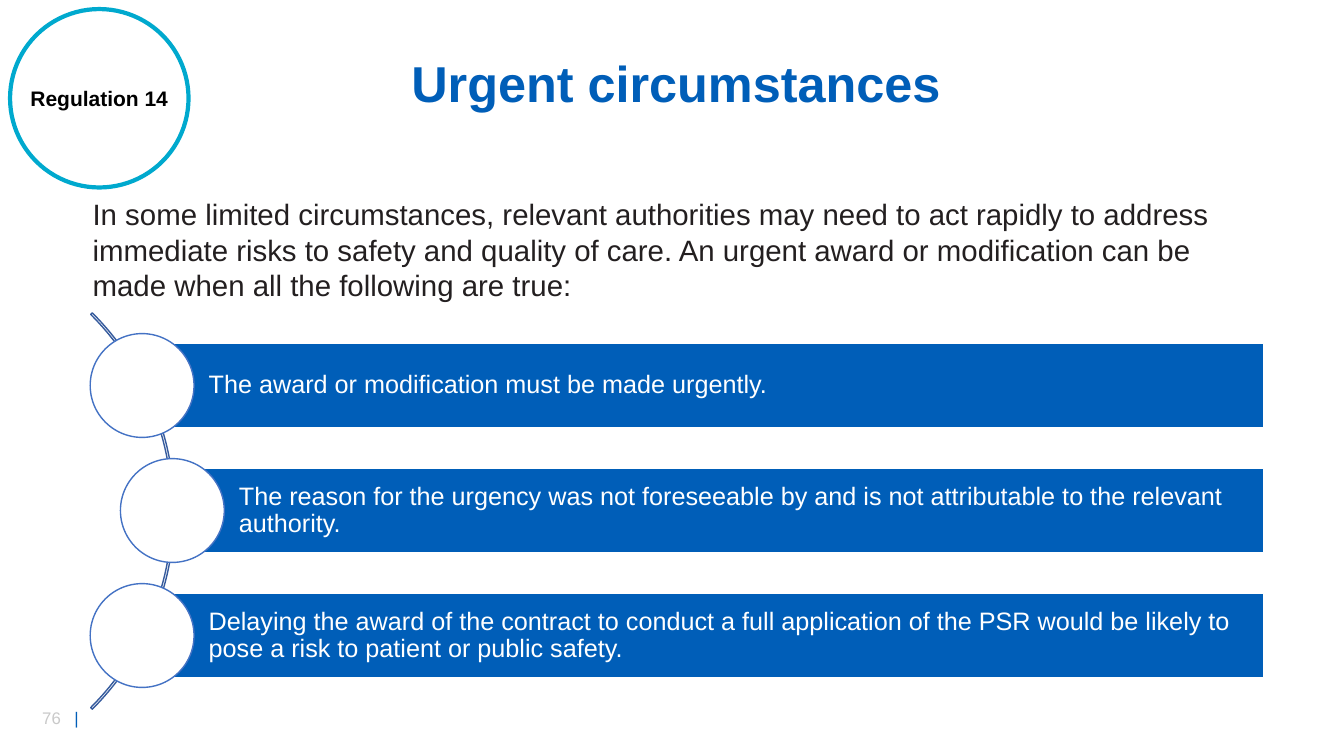
from dataclasses import dataclass

from lxml import etree
from pptx import Presentation
from pptx.dml.color import RGBColor
from pptx.enum.shapes import MSO_SHAPE
from pptx.enum.text import MSO_ANCHOR, PP_ALIGN
from pptx.oxml.ns import qn
from pptx.shapes.autoshape import Shape
from pptx.slide import Slide
from pptx.text.text import _Paragraph
from pptx.util import Inches, Pt

ELLIPSE, RECTANGLE, BLOCK_ARC = MSO_SHAPE.OVAL, MSO_SHAPE.RECTANGLE, MSO_SHAPE.BLOCK_ARC
MIDDLE, CENTER, LEFT = MSO_ANCHOR.MIDDLE, PP_ALIGN.CENTER, PP_ALIGN.LEFT

BLUE, WHITE, BLACK = "005EB8", "FFFFFF", "000000"
TEAL, DARK, GREY = "00A9CE", "231F20", "C9C9C9"
ARC_BLUE, RING_BLUE = "365B9D", "4472C4"

BAR_RIGHT, BAR_HEIGHT = 12.53, 0.83
FIRST_BAR_TOP, BAR_STEP = 3.41, 1.24
KNOB_SIZE = 1.03


@dataclass
class Condition:
    text: str
    left: float


CONDITIONS = [
    Condition("The award or modification must be made urgently.", 1.41),
    Condition("The reason for the urgency was not foreseeable by and is not "
              "attributable to the relevant authority.", 1.71),
    Condition("Delaying the award of the contract to conduct a full application of "
              "the PSR would be likely to pose a risk to patient or public safety.", 1.41),
]


def rgb(hex_color: str) -> RGBColor:
    return RGBColor.from_string(hex_color)


def style(paragraph: _Paragraph, size: float, color: str, bold: bool = False,
          align: PP_ALIGN = LEFT, spacing: float = 1.0) -> None:
    paragraph.alignment = align
    paragraph.line_spacing = spacing
    font = paragraph.font
    font.name, font.size, font.bold = "Arial", Pt(size), bold
    font.color.rgb = rgb(color)


def add_outlined(slide: Slide, kind: MSO_SHAPE, left: float, top: float, width: float,
                 height: float, fill: str | None, line: str, weight: float = 1) -> Shape:
    shape = slide.shapes.add_shape(
        kind, Inches(left), Inches(top), Inches(width), Inches(height))
    shape.shadow.inherit = False
    if fill is None:
        shape.fill.background()
    else:
        shape.fill.solid()
        shape.fill.fore_color.rgb = rgb(fill)
    shape.line.color.rgb = rgb(line)
    shape.line.width = Pt(weight)
    return shape


def add_text(slide: Slide, left: float, top: float, width: float, height: float,
             text: str) -> _Paragraph:
    box = slide.shapes.add_textbox(
        Inches(left), Inches(top), Inches(width), Inches(height))
    box.text_frame.word_wrap = True
    box.text_frame.text = text
    return box.text_frame.paragraphs[0]


def add_page_number(slide: Slide) -> None:
    number = add_text(slide, 0.32, 6.97, 0.71, 0.3, "76\t")
    tabs = etree.SubElement(number._p.get_or_add_pPr(), qn("a:tabLst"))
    etree.SubElement(tabs, qn("a:tab"), pos=str(Inches(0.32)), algn="l")
    style(number, 12, GREY)
    divider = number.add_run()
    divider.text = "|"
    divider.font.color.rgb = rgb(BLUE)


def add_title(slide: Slide) -> None:
    title = slide.shapes.title
    title.left, title.top = Inches(1.52), Inches(0.38)
    title.width, title.height = Inches(10.37), Inches(0.95)
    title.text_frame.text = "Urgent circumstances"
    title.text_frame.vertical_anchor = MIDDLE
    style(title.text_frame.paragraphs[0], 36, BLUE, True, CENTER, 0.9)


def add_regulation_badge(slide: Slide) -> None:
    badge = add_outlined(slide, ELLIPSE, 0.1, 0.09, 1.77, 1.77, WHITE, TEAL, 3)
    frame = badge.text_frame
    frame.text = "Regulation 14"
    frame.word_wrap = False
    frame.vertical_anchor = MIDDLE
    style(frame.paragraphs[0], 15, BLACK, True, CENTER)


def add_condition(slide: Slide, condition: Condition, top: float) -> None:
    """Draw a bar with its text and a circle centred on the bar's left end."""
    bar = add_outlined(slide, RECTANGLE, condition.left, top,
                       BAR_RIGHT - condition.left, BAR_HEIGHT, BLUE, WHITE)
    frame = bar.text_frame
    frame.text = condition.text
    frame.word_wrap = True
    frame.vertical_anchor = MIDDLE
    frame.margin_left = Inches(0.66)
    frame.margin_top = frame.margin_right = frame.margin_bottom = Inches(0.05)
    style(frame.paragraphs[0], 18, WHITE, spacing=0.9)
    add_outlined(slide, ELLIPSE, condition.left - KNOB_SIZE / 2,
                 top + (BAR_HEIGHT - KNOB_SIZE) / 2, KNOB_SIZE, KNOB_SIZE,
                 WHITE, RING_BLUE)


def main() -> None:
    deck = Presentation()
    deck.slide_width, deck.slide_height = Inches(13.33), Inches(7.5)
    slide = deck.slides.add_slide(deck.slide_layouts.get_by_name("Title Only"))

    add_page_number(slide)
    add_title(slide)
    introduction = add_text(
        slide, 0.82, 1.9, 11.74, 1.51,
        "In some limited circumstances, relevant authorities may need to act rapidly to "
        "address immediate risks to safety and quality of care. An urgent award or "
        "modification can be made when all the following are true:")
    style(introduction, 21, DARK)
    add_regulation_badge(slide)

    arc = add_outlined(slide, BLOCK_ARC, -3.83, 2.29, 5.56, 5.56, None, ARC_BLUE)
    for index, adjustment in enumerate((189, 27, 0.004)):
        arc.adjustments[index] = adjustment
    for index, condition in enumerate(CONDITIONS):
        add_condition(slide, condition, FIRST_BAR_TOP + index * BAR_STEP)

    deck.save("out.pptx")


if __name__ == "__main__":
    main()
